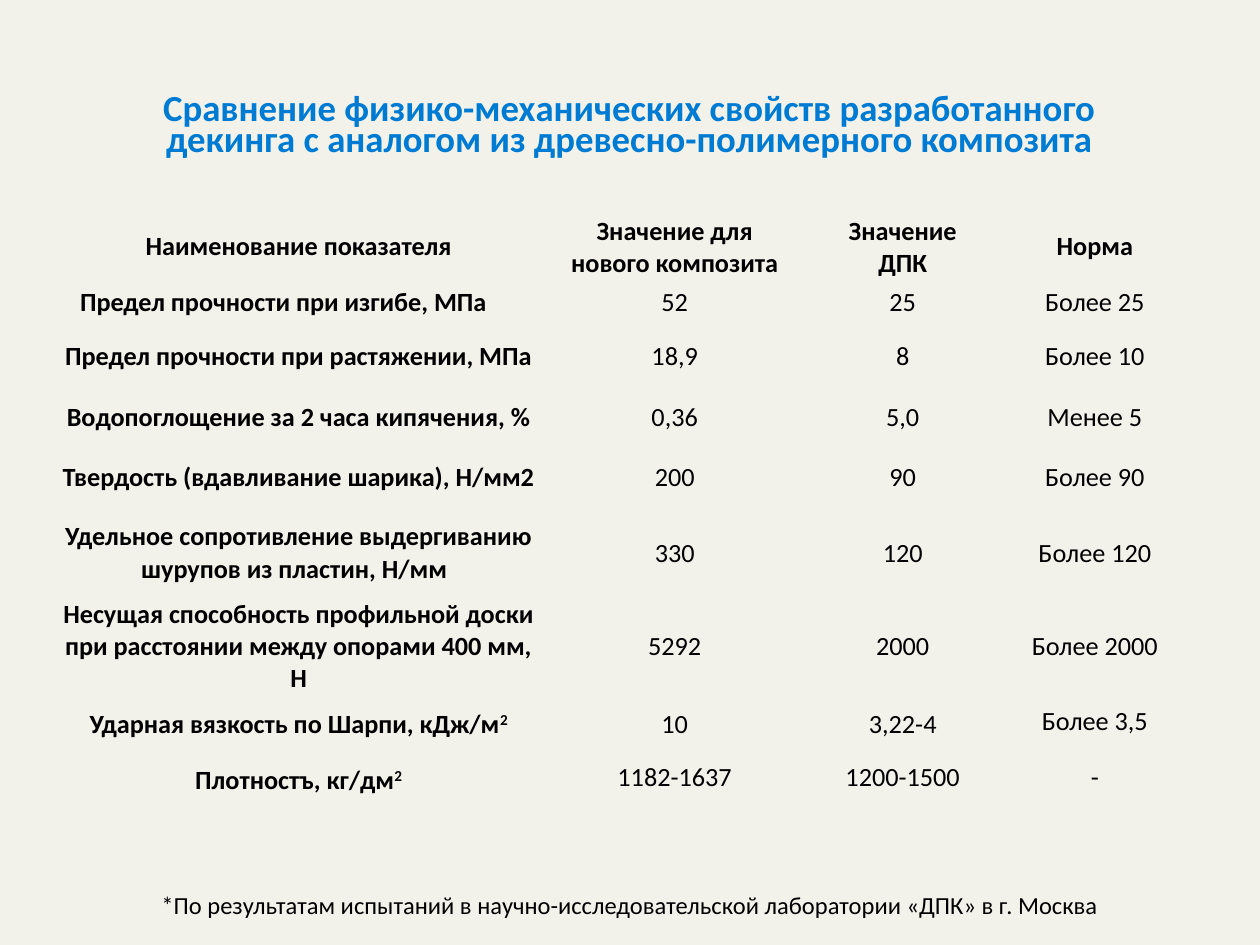
"""Build a slide comparing the properties of a new decking with a wood-polymer one."""
from pptx import Presentation
from pptx import util as u
from pptx.dml.color import RGBColor
from pptx.enum import text
from pptx.oxml.ns import qn

BACKGROUND = RGBColor(0xF3, 0xF2, 0xEA)
BLUE = RGBColor(0x00, 0x7B, 0xD3)
BLACK = RGBColor(0x00, 0x00, 0x00)
NO_STYLE = "{2D5ABB26-0587-4C30-8999-92F81FD0307C}"

deck = Presentation()
deck.slide_width, deck.slide_height = u.Inches(10), u.Inches(7.5)
page = deck.slides.add_slide(deck.slide_layouts[6])
page.background.fill.solid()
page.background.fill.fore_color.rgb = BACKGROUND


def place(left, top, width, height):
    """Turn percentages of the slide into lengths."""
    across, down = deck.slide_width / 100, deck.slide_height / 100
    return int(left * across), int(top * down), int(width * across), int(height * down)


def write(para, wording, size, bold, colour, spacing=None):
    """Fill a centred paragraph, raising whatever follows a caret."""
    para.alignment = text.PP_ALIGN.CENTER
    para.line_spacing = spacing
    for index, part in enumerate(wording.split("^")):
        span = para.add_run()
        span.text = part
        for name, value in {"name": "Calibri", "size": u.Pt(size), "bold": bold}.items():
            setattr(span.font, name, value)
        span.font.color.rgb = colour
        if index:
            span.font._element.set("baseline", "30000")


captions = [
    ((10, 4.8, 79.9, 12.53), 21, True, BLUE, 0.7,
     "Сравнение физико-механических свойств разработанного "
     "декинга с аналогом из древесно-полимерного композита"),
    ((8.7, 85.33, 82.6, 12.53), 14, False, BLACK, 0.9,
     "*По результатам испытаний в научно-исследовательской лаборатории «ДПК» в г. Москва"),
]
caption_format = {
    "word_wrap": True, "vertical_anchor": text.MSO_ANCHOR.BOTTOM,
    "margin_left": u.Inches(0.07), "margin_right": u.Inches(0.07),
    "margin_top": u.Inches(0.04), "margin_bottom": u.Inches(0.04),
}
for area, size, bold, colour, spacing, wording in captions:
    box = page.shapes.add_textbox(*place(*area))
    for name, value in caption_format.items():
        setattr(box.text_frame, name, value)
    write(box.text_frame.paragraphs[0], wording, size, bold, colour, spacing)

rows = [
    (0.5, "Наименование показателя", "Значение для нового композита", "Значение\nДПК", "Норма"),
    (0.38, "Предел прочности при изгибе, МПа", "52", "25", "Более 25"),
    (0.48, "Предел прочности при растяжении, МПа", "18,9", "8", "Более 10"),
    (0.48, "Водопоглощение за 2 часа кипячения, %", "0,36", "5,0", "Менее 5"),
    (0.48, "Твердость (вдавливание шарика), Н/мм2", "200", "90", "Более 90"),
    (0.72, "Удельное сопротивление выдергиванию шурупов из пластин, Н/мм\t",
     "330", "120", "Более 120"),
    (0.76, "Несущая способность профильной доски при расстоянии между опорами 400 мм, Н",
     "5292", "2000", "Более 2000"),
    (0.44, "Ударная вязкость по Шарпи, кДж/м^2", "10", "3,22-4", "Более 3,5"),
    (0.45, "Плотностъ, кг/дм^2", "1182-1637", "1200-1500", "-"),
]
loose_cells = {(7, 0), (7, 1), (7, 2), (8, 0)}
cell_format = {
    "vertical_anchor": text.MSO_ANCHOR.MIDDLE, "margin_top": 0, "margin_bottom": 0,
    "margin_left": u.Inches(0.06), "margin_right": u.Inches(0.06),
}

table = page.shapes.add_table(len(rows), 4, *place(3.8, 22.8, 90.2, 62.53)).table
table.first_row = table.horz_banding = False
table._tbl.tblPr.find(qn("a:tableStyleId")).text = NO_STYLE
for column, width in zip(table.columns, (3.98, 1.99, 1.63, 1.42)):
    column.width = u.Inches(width)

for r, (height, *wordings) in enumerate(rows):
    table.rows[r].height = u.Inches(height)
    for c, wording in enumerate(wordings):
        cell = table.cell(r, c)
        cell.fill.background()
        for name, value in cell_format.items():
            setattr(cell, name, value)
        for index, line in enumerate(wording.split("\n")):
            frame = cell.text_frame
            para = frame.add_paragraph() if index else frame.paragraphs[0]
            spacing = 1.15 if (r, c) in loose_cells else None
            write(para, line, 15, r == 0 or c == 0, BLACK, spacing)
table.cell(1, 0).margin_right = u.Inches(0.3)

deck.save("out.pptx")
